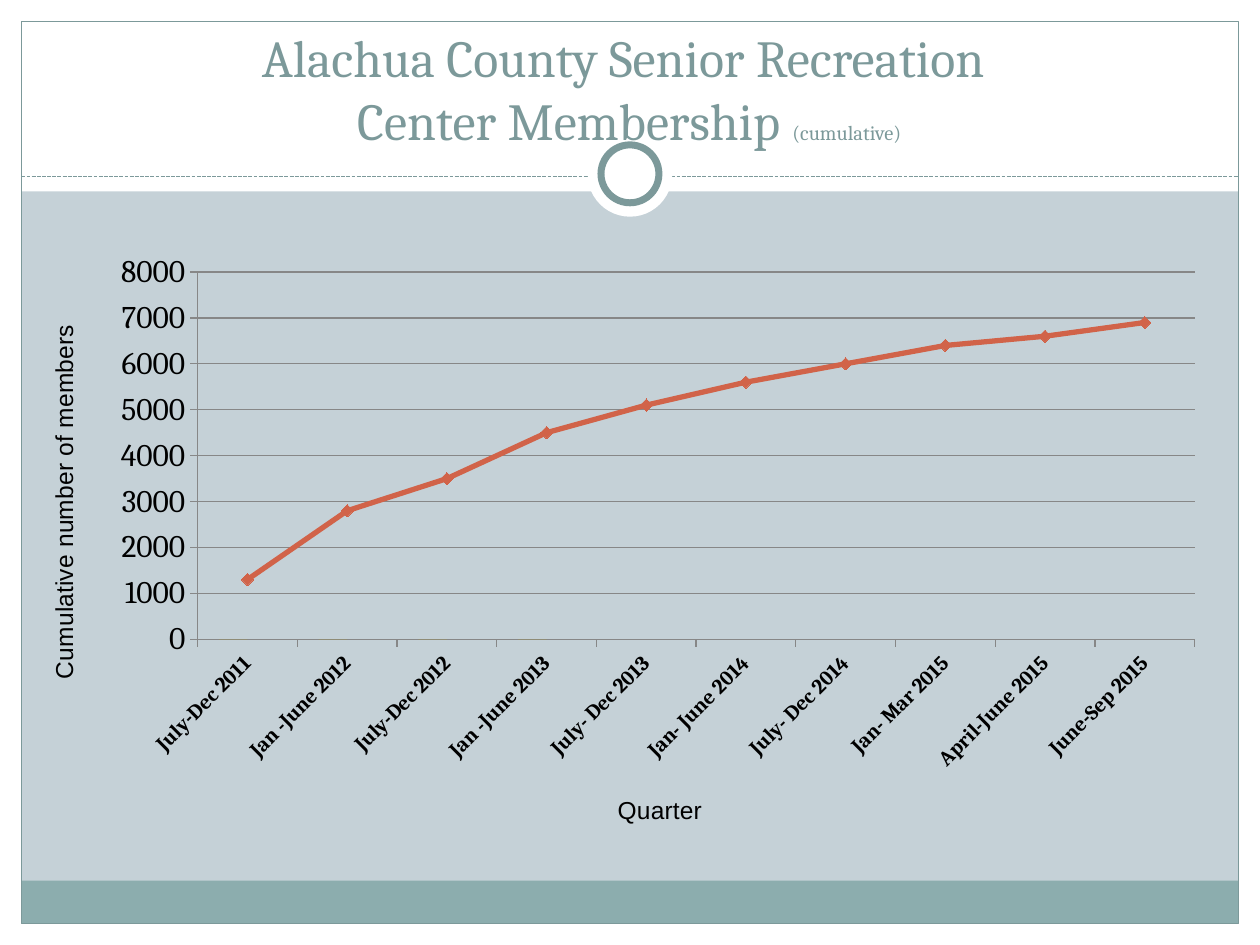
from dataclasses import dataclass
from typing import Optional

from lxml.etree import SubElement
from pptx import Presentation
from pptx.chart.data import CategoryChartData as ChartData
from pptx.dml.color import RGBColor as RGB
from pptx.enum.chart import XL_CHART_TYPE as Kind, XL_TICK_MARK as Tick
from pptx.enum.dml import MSO_LINE as Dash
from pptx.enum.shapes import MSO_CONNECTOR as Link, MSO_SHAPE as Form
from pptx.enum.text import MSO_ANCHOR as Anchor, PP_ALIGN as Align
from pptx.oxml import parse_xml
from pptx.oxml.ns import nsdecls, qn
from pptx.util import Inches, Pt

WIDE, HIGH = 10, 7.5
EDGE = 0.17
HUES = {
    "back": "C5D1D7", "white": "FFFFFF", "teal": "8CADAE", "slate": "7C999A",
    "gold": "CCB400", "rust": "D16349", "grid": "878787", "ink": "000000",
}


@dataclass
class Part:
    """A plain shape of the frame, in inches."""
    left: float
    top: float
    width: float
    height: float
    fill: Optional[str] = "white"
    line: Optional[str] = None
    weight: float = 0.75
    form: Form = Form.RECTANGLE


def ring(top: float, size: float, **style) -> Part:
    """A circle centred across the slide."""
    return Part((WIDE - size) / 2, top, size, size, form=Form.OVAL, **style)


BANDS = [
    Part(0, HIGH - EDGE, WIDE, EDGE),
    Part(0, 0, WIDE, 1.52),
    Part(0, 0, EDGE, HIGH),
    Part(WIDE - EDGE, 0, EDGE, HIGH),
    Part(EDGE, 6.99, WIDE - 2 * EDGE, 0.34, "teal"),
    Part(EDGE, EDGE, WIDE - 2 * EDGE, HIGH - 2 * EDGE, None, "slate"),
]
RINGS = [ring(1.05, 0.67), ring(1.15, 0.46, line="slate", weight=4)]

CATS = [
    "July-Dec 2011", "Jan -June 2012", "July-Dec 2012", "Jan -June 2013",
    "July- Dec 2013", "Jan- June 2014", "July- Dec 2014", "Jan- Mar 2015",
    "April-June 2015", "June-Sep 2015",
]
COUNTS = [1300, 2800, 3500, 4500, 5100, 5600, 6000, 6400, 6600, 6900]


def hue(name: str) -> RGB:
    return RGB.from_string(HUES[name])


def draw(shapes, part: Part) -> None:
    box = [Inches(n) for n in (part.left, part.top, part.width, part.height)]
    shape = shapes.add_shape(part.form, *box)
    shape.shadow.inherit = False
    if part.fill:
        shape.fill.solid()
        shape.fill.fore_color.rgb = hue(part.fill)
    else:
        shape.fill.background()
    if part.line:
        shape.line.color.rgb = hue(part.line)
        shape.line.width = Pt(part.weight)
    else:
        shape.line.fill.background()


def rule(shapes, top: float) -> None:
    """The dashed line under the title."""
    ends = [Inches(n) for n in (EDGE, top, WIDE - EDGE, top)]
    line = shapes.add_connector(Link.STRAIGHT, *ends)
    line.line.color.rgb = hue("slate")
    line.line.width = Pt(0.75)
    line.line.dash_style = Dash.SQUARE_DOT
    SubElement(line._element.spPr, qn("a:effectLst"))


def style(font, size: float, face: str = "Cambria", color: str = "ink",
          bold: bool = False) -> None:
    font.size, font.name, font.bold = Pt(size), face, bold
    font.color.rgb = hue(color)


def write(para, text: str, **look) -> None:
    """Add a run in the given format."""
    run = para.add_run()
    run.text = text
    style(run.font, **look)


def title(shapes) -> None:
    box = shapes.add_textbox(Inches(0.33), Inches(0.42), Inches(9.33), Inches(0.83))
    frame = box.text_frame
    frame.word_wrap = True
    frame.vertical_anchor = Anchor.BOTTOM
    para = frame.paragraphs[0]
    para.alignment = Align.CENTER
    para.line_spacing = Pt(36)
    write(para, "Alachua County Senior Recreation ", size=29.7, color="slate")
    para.add_line_break()
    write(para, "Center Membership ", size=29.7, color="slate")
    write(para, "(cumulative)", size=11.7, color="slate")


def place(owner, index: int, inner: bool = False, **shares: float) -> None:
    """Fix a chart part at shares of the chart's size."""
    for old in owner.findall(qn("c:layout")):
        owner.remove(old)
    target = '<c:layoutTarget val="inner"/>' if inner else ""
    modes = '<c:xMode val="edge"/><c:yMode val="edge"/>'
    spots = "".join(f'<c:{key} val="{val}"/>' for key, val in shares.items())
    owner.insert(index, parse_xml(
        f'<c:layout {nsdecls("c")}><c:manualLayout>{target}{modes}{spots}'
        "</c:manualLayout></c:layout>"))


def dress(axis, name: str, x: float, y: float, **look) -> None:
    """Format an axis and set its title."""
    write(axis.axis_title.text_frame.paragraphs[0], name, size=14, face="Arial")
    place(axis.axis_title._element, 1, x=x, y=y)
    style(axis.tick_labels.font, **look)
    axis.major_tick_mark = Tick.OUTSIDE
    axis.minor_tick_mark = Tick.NONE
    axis.format.line.color.rgb = hue("grid")
    axis.format.line.width = Pt(0.75)


def split(chart) -> None:
    """Move the last column series to a line plot on the same axes."""
    bars = chart._chartSpace.find(".//" + qn("c:barChart"))
    last = bars.findall(qn("c:ser"))[-1]
    plot = parse_xml(
        f'<c:lineChart {nsdecls("c")}><c:grouping val="standard"/>'
        '<c:varyColors val="0"/><c:marker val="1"/></c:lineChart>')
    flip = last.find(qn("c:invertIfNegative"))
    if flip is not None:
        last.remove(flip)
    plot.insert(2, last)
    for axis in bars.findall(qn("c:axId")):
        SubElement(plot, qn("c:axId")).set("val", axis.get("val"))
    bars.addnext(plot)


def graph(shapes) -> None:
    data = ChartData()
    data.categories = CATS
    data.add_series("Series 1", [0] * 4 + [None] * 6)
    data.add_series("Series 2", [None] * len(CATS))
    data.add_series("Series 3", COUNTS)
    box = [Inches(n) for n in (0.25, 1.92, 9.42, 4.78)]
    chart = shapes.add_chart(Kind.COLUMN_CLUSTERED, *box, data).chart
    chart.has_legend = chart.has_title = False
    style(chart.font, 18)
    split(chart)

    # Series
    bars, lines = chart.plots
    bars.gap_width = 150
    bars.vary_by_categories = False
    for series, color in zip(bars.series, ("gold", "teal")):
        series.format.fill.solid()
        series.format.fill.fore_color.rgb = hue(color)
    curve = lines.series[0]
    curve.smooth = False
    curve.format.line.color.rgb = hue("rust")
    curve.format.line.width = Pt(3)
    curve.marker.style = 2  # diamond
    curve.marker.size = 7
    curve.marker.format.fill.solid()
    curve.marker.format.fill.fore_color.rgb = hue("rust")
    curve.marker.format.line.color.rgb = hue("rust")

    # Axes
    across, up = chart.category_axis, chart.value_axis
    dress(across, "Quarter", 0.49, 0.91, size=12, bold=True)
    dress(up, "Cumulative number of members", 0.01, 0.13, size=18)
    across._element.find(qn("c:txPr")).find(qn("a:bodyPr")).set("rot", "-2700000")
    up.minimum_scale, up.maximum_scale, up.major_unit = 0, 8000, 1000
    up.tick_labels.number_format = "General"
    up.tick_labels.number_format_is_linked = False
    up.major_gridlines.format.line.color.rgb = hue("grid")
    up.major_gridlines.format.line.width = Pt(0.75)
    area = chart._chartSpace.find(".//" + qn("c:plotArea"))
    place(area, 0, inner=True, x=0.14, y=0.05, w=0.84, h=0.61)


def main() -> None:
    deck = Presentation()
    deck.slide_width, deck.slide_height = Inches(WIDE), Inches(HIGH)
    slide = deck.slides.add_slide(deck.slide_layouts[6])
    slide.background.fill.solid()
    slide.background.fill.fore_color.rgb = hue("back")
    shapes = slide.shapes

    # Frame
    for band in BANDS:
        draw(shapes, band)
    rule(shapes, 1.4)
    for disc in RINGS:
        draw(shapes, disc)

    # Content
    title(shapes)
    graph(shapes)
    deck.save("out.pptx")


if __name__ == "__main__":
    main()
